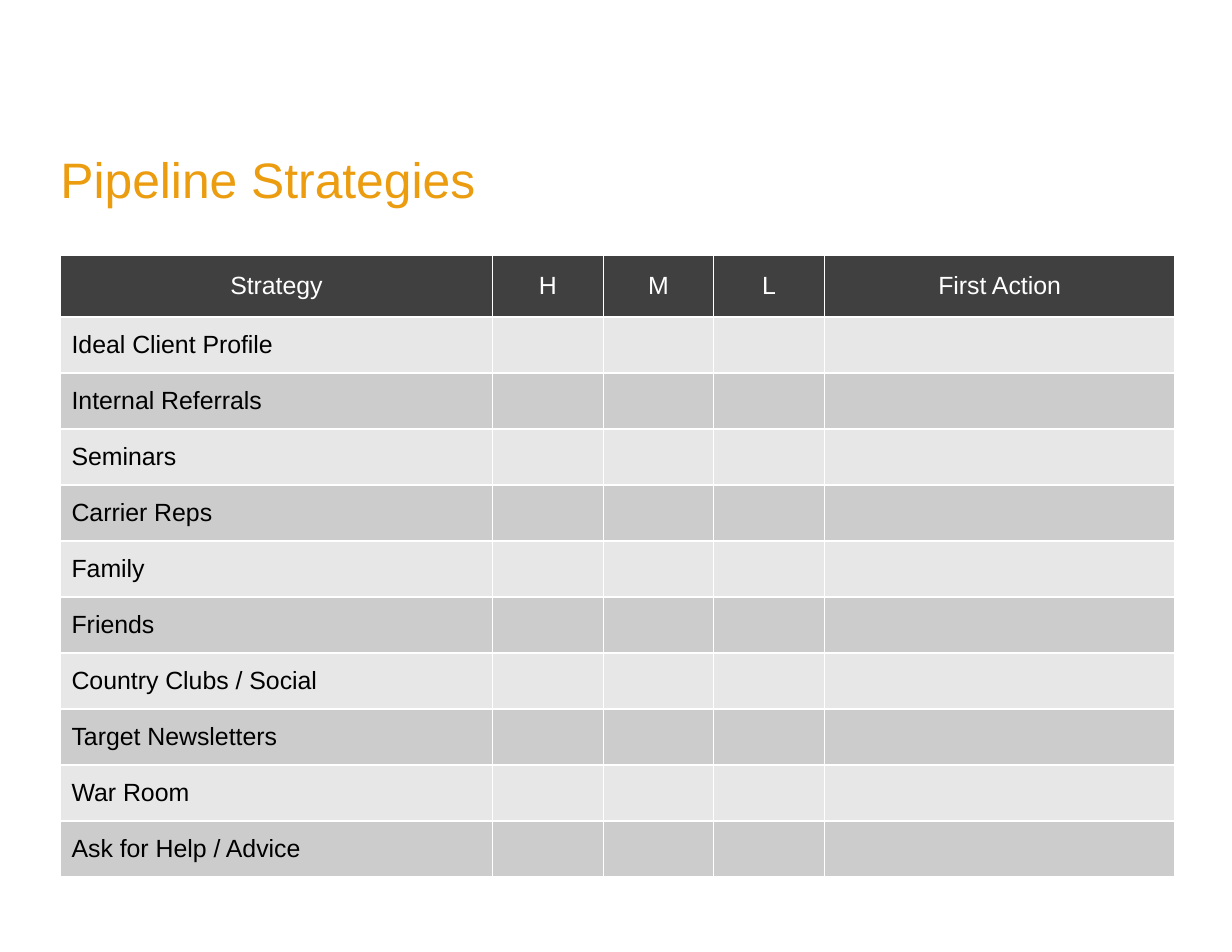
from lxml import etree
from pptx import Presentation
from pptx import util as u
from pptx.dml.color import RGBColor
from pptx.enum import text
from pptx.oxml import ns

FONT = "Arial"
COLORS = {
    "title": "EB9C0F",
    "header": "404040",
    "header_text": "FFFFFF",
    "body_text": "000000",
    "odd_row": "E7E7E7",
    "even_row": "CCCCCC",
    "border": "FFFFFF",
}
HEADERS = ["Strategy", "H", "M", "L", "First Action"]
STRATEGIES = [
    "Ideal Client Profile",
    "Internal Referrals",
    "Seminars",
    "Carrier Reps",
    "Family",
    "Friends",
    "Country Clubs / Social",
    "Target Newsletters",
    "War Room",
    "Ask for Help / Advice",
]
COLUMN_WIDTHS = [9.8, 2.51, 2.51, 2.51, 7.95]
HEADER_HEIGHT = 1.4
ROW_HEIGHT = 1.27


def style_font(paragraph, size, color):
    for run in paragraph.runs:
        run.font.name = FONT
        run.font.size = u.Pt(size)
        run.font.color.rgb = RGBColor.from_string(COLORS[color])


def add_title(slide, wording):
    title = slide.shapes.add_textbox(u.Cm(1.12), u.Cm(3.25), u.Cm(10.26), u.Cm(1.63))
    frame = title.text_frame
    frame.word_wrap = False
    frame.auto_size = text.MSO_AUTO_SIZE.SHAPE_TO_FIT_TEXT
    frame.text = wording
    style_font(frame.paragraphs[0], 32, "title")


def add_borders(cell):
    """Draw a 1 pt line on every side; call before the cell is filled."""
    properties = cell._tc.get_or_add_tcPr()
    for side in ("a:lnL", "a:lnR", "a:lnT", "a:lnB"):
        line = etree.SubElement(properties, ns.qn(side), w=str(u.Pt(1)))
        fill = etree.SubElement(line, ns.qn("a:solidFill"))
        etree.SubElement(fill, ns.qn("a:srgbClr"), val=COLORS["border"])


def fill_cell(cell, wording, fill, font_color, align):
    add_borders(cell)
    cell.fill.solid()
    cell.fill.fore_color.rgb = RGBColor.from_string(COLORS[fill])
    if wording:
        cell.vertical_anchor = text.MSO_ANCHOR.MIDDLE
        cell.text_frame.text = wording
        paragraph = cell.text_frame.paragraphs[0]
        paragraph.alignment = align
        style_font(paragraph, 16, font_color)


def add_strategy_table(slide):
    row_count = len(STRATEGIES) + 1
    height = HEADER_HEIGHT + ROW_HEIGHT * len(STRATEGIES)
    table = slide.shapes.add_table(
        row_count, len(HEADERS), u.Cm(1.37), u.Cm(5.79),
        u.Cm(sum(COLUMN_WIDTHS)), u.Cm(height),
    ).table
    for column, width in zip(table.columns, COLUMN_WIDTHS):
        column.width = u.Cm(width)
    for row in table.rows:
        row.height = u.Cm(ROW_HEIGHT)
    table.rows[0].height = u.Cm(HEADER_HEIGHT)

    for column, header in enumerate(HEADERS):
        fill_cell(table.cell(0, column), header, "header", "header_text",
                  text.PP_ALIGN.CENTER)
    for row, strategy in enumerate(STRATEGIES, start=1):
        band = "odd_row" if row % 2 else "even_row"
        for column in range(len(HEADERS)):
            wording = strategy if column == 0 else ""
            fill_cell(table.cell(row, column), wording, band, "body_text",
                      text.PP_ALIGN.LEFT)


def main():
    presentation = Presentation()
    presentation.slide_width = u.Cm(27.94)
    presentation.slide_height = u.Cm(21.59)
    slide = presentation.slides.add_slide(presentation.slide_layouts[6])
    add_title(slide, "Pipeline Strategies")
    add_strategy_table(slide)
    presentation.save("out.pptx")


if __name__ == "__main__":
    main()
